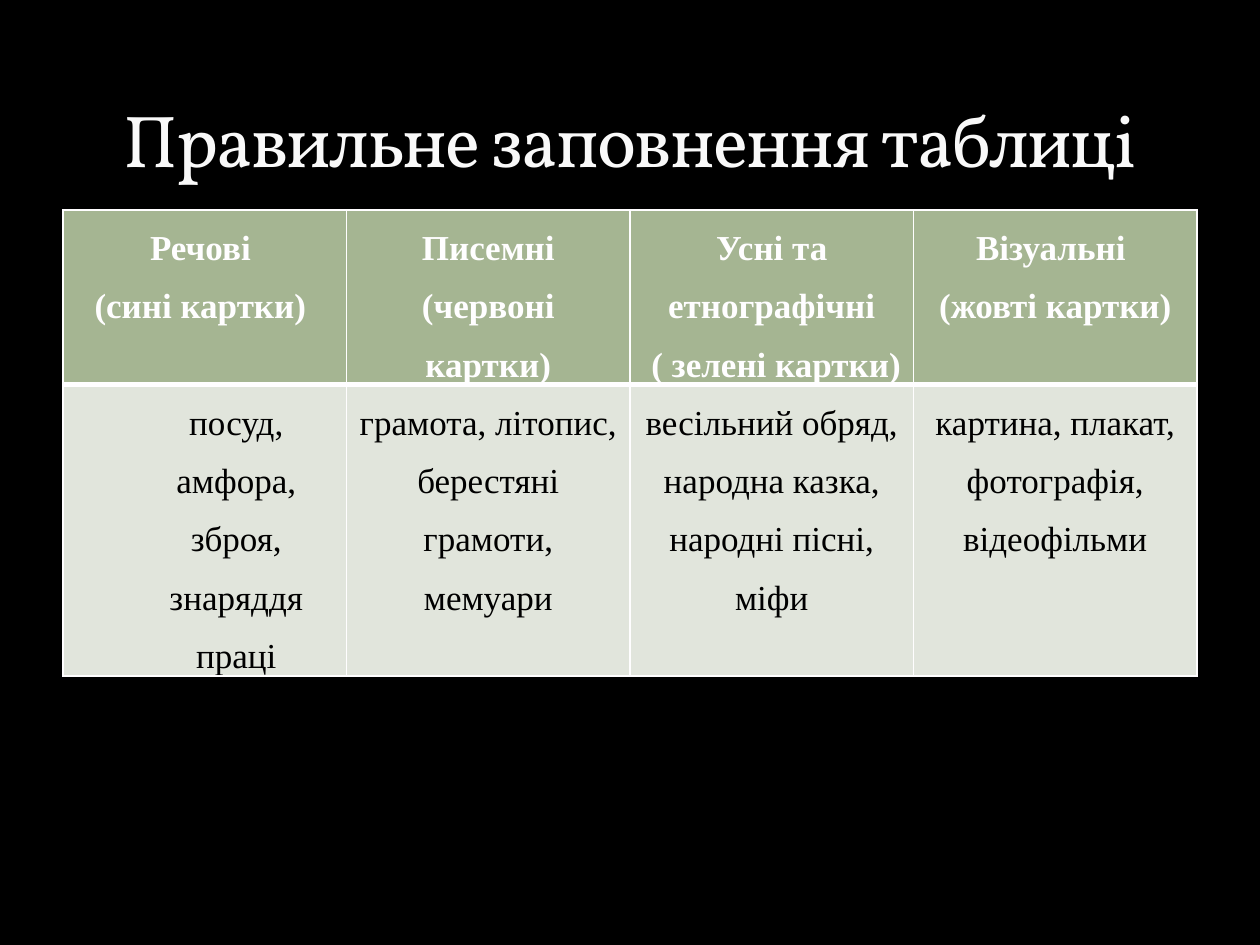
import pptx
import pptx.util
import pptx.dml.color
import pptx.enum.text
import pptx.oxml
import pptx.oxml.ns

Pt = pptx.util.Pt
RGBColor = pptx.dml.color.RGBColor
PP_ALIGN = pptx.enum.text.PP_ALIGN
MSO_ANCHOR = pptx.enum.text.MSO_ANCHOR

BLACK = RGBColor(0x00, 0x00, 0x00)
WHITE = RGBColor(0xFF, 0xFE, 0xFF)
TITLE_WHITE = RGBColor(0xF9, 0xF9, 0xF9)
GREEN = RGBColor(0xA5, 0xB5, 0x92)
PALE_GREEN = RGBColor(0xE1, 0xE5, 0xDC)

SOURCES = [
    ("Речові \n(сині картки) ", "посуд, амфора, зброя, знаряддя праці"),
    ("Писемні (червоні картки)", "грамота, літопис, берестяні грамоти, мемуари"),
    ("Усні та етнографічні\n ( зелені картки)",
     "весільний обряд, народна казка, народні пісні, міфи"),
    ("Візуальні \n(жовті картки)", "картина, плакат, фотографія, відеофільми"),
]


class Deck:
    title_font = "Vollkorn"
    body_font = "Times New Roman"

    def __init__(self):
        self.prs = pptx.Presentation()
        self.prs.slide_width = Pt(720)
        self.prs.slide_height = Pt(540)

    def slide(self, color):
        self.s = self.prs.slides.add_slide(self.prs.slide_layouts[5])
        fill = self.s.background.fill
        fill.solid()
        fill.fore_color.rgb = color

    def format(self, p, font, size, color, bold=False):
        p.alignment = PP_ALIGN.CENTER
        for r in p.runs:
            r.font.name = font
            r.font.size = Pt(size)
            r.font.bold = bold
            r.font.color.rgb = color

    def title(self, text, x, y, w, h):
        sp = self.s.shapes.title
        sp.left, sp.top, sp.width, sp.height = Pt(x), Pt(y), Pt(w), Pt(h)
        tf = sp.text_frame
        tf.text = text
        tf.word_wrap = True
        tf.auto_size = pptx.enum.text.MSO_AUTO_SIZE.NONE
        tf.vertical_anchor = MSO_ANCHOR.BOTTOM
        p = tf.paragraphs[0]
        self.format(p, self.title_font, 42, TITLE_WHITE)
        p.runs[0].font._element.set("spc", "-100")

    def borders(self, cell, widths):
        tcPr = cell._tc.get_or_add_tcPr()
        for side, width in zip("LRTB", widths):
            tcPr.append(pptx.oxml.parse_xml(
                f'<a:ln{side} {pptx.oxml.ns.nsdecls("a")} w="{Pt(width)}">'
                f'<a:solidFill><a:srgbClr val="{WHITE}"/></a:solidFill>'
                f'</a:ln{side}>'))

    def cell(self, cell, text, fill, color, bold, widths):
        cell.text = text
        cell.margin_left = cell.margin_right = Pt(5)
        cell.margin_top = cell.margin_bottom = 0
        self.borders(cell, widths)
        cell.fill.solid()
        cell.fill.fore_color.rgb = fill
        for p in cell.text_frame.paragraphs:
            p.line_spacing = 1.5
            self.format(p, self.body_font, 20, color, bold)

    def table(self, columns, x, y, w, h, row_height):
        frame = self.s.shapes.add_table(2, len(columns), Pt(x), Pt(y), Pt(w), Pt(h))
        table = frame.table
        for row in table.rows:
            row.height = Pt(row_height)
        frame.height = Pt(h)
        for i, (head, body) in enumerate(columns):
            self.cell(table.cell(0, i), head, GREEN, WHITE, True, (1, 1, 1, 3))
            self.cell(table.cell(1, i), body, PALE_GREEN, BLACK, False, (1, 1, 3, 1))
        return table

    def indent(self, cell, left):
        for p in cell.text_frame.paragraphs:
            pPr = p._p.get_or_add_pPr()
            pPr.set("marL", str(Pt(left)))
            pPr.set("indent", "0")


def main():
    deck = Deck()
    deck.slide(BLACK)
    deck.title("Правильне заповнення таблиці", 36, 12, 648, 96)
    table = deck.table(SOURCES, 36, 120, 648, 288, 29.2)
    deck.indent(table.cell(1, 0), 36)
    deck.prs.save("out.pptx")


if __name__ == "__main__":
    main()
